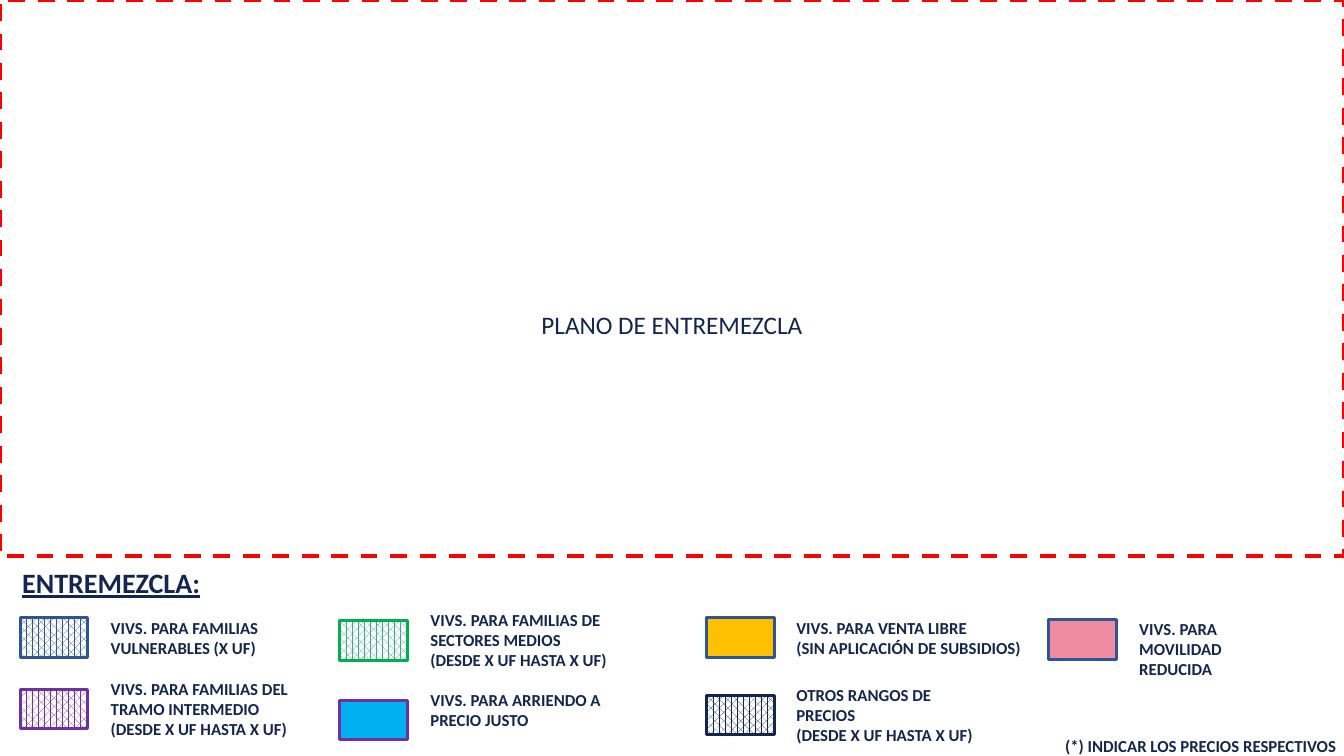
from dataclasses import dataclass

from pptx import Presentation
from pptx.dml.color import RGBColor
from pptx.enum.dml import MSO_LINE, MSO_PATTERN
from pptx.enum.shapes import MSO_SHAPE
from pptx.enum.text import MSO_ANCHOR, PP_ALIGN
from pptx.util import Emu, Pt

PX = 9144
NAVY, BLUE, PURPLE, WHITE = "12264E", "2F5597", "7030A0", "FFFFFF"
SWATCH_W, SWATCH_H = 67, 39


@dataclass
class Entry:
    """One legend entry: a swatch and its label, in px (100 to the inch)."""
    swatch: tuple[int, int]
    label: tuple[int, int, int, int]
    lines: tuple[str, ...]
    fill: str
    line: str
    patterned: bool = False


LEGEND = [
    Entry((20, 613), (100, 608, 187, 50),
          ("VIVS. PARA FAMILIAS VULNERABLES (X UF)",), BLUE, BLUE, True),
    Entry((20, 684), (100, 668, 197, 71),
          ("VIVS. PARA FAMILIAS DEL TRAMO INTERMEDIO (DESDE X UF HASTA X UF)",),
          PURPLE, PURPLE, True),
    Entry((337, 616), (417, 600, 235, 71),
          ("VIVS. PARA FAMILIAS DE SECTORES MEDIOS", "(DESDE X UF HASTA X UF)"),
          "3CAA90", "00B050", True),
    Entry((337, 695), (417, 679, 197, 50),
          ("VIVS. PARA ARRIENDO A PRECIO JUSTO",), "00B0F0", PURPLE),
    Entry((701, 613), (780, 608, 300, 50),
          ("VIVS. PARA VENTA LIBRE", "(SIN APLICACIÓN DE SUBSIDIOS)"), "FFC000", BLUE),
    Entry((701, 690), (780, 674, 197, 71),
          ("OTROS RANGOS DE PRECIOS", "(DESDE X UF HASTA X UF)"), NAVY, NAVY, True),
    Entry((1040, 615), (1120, 609, 108, 71),
          ("VIVS. PARA MOVILIDAD REDUCIDA",), "EF8BA0", BLUE),
]


def rgb(color: str) -> RGBColor:
    """Turn a hex string into a colour."""
    return RGBColor.from_string(color)


def px(*lengths: int) -> list[Emu]:
    """Turn px lengths into EMU."""
    return [Emu(n * PX) for n in lengths]


def write(tf, lines: tuple[str, ...], size: int, bold: bool = True,
          align: PP_ALIGN = PP_ALIGN.LEFT) -> None:
    """Fill a text frame with one paragraph per line."""
    tf.word_wrap = True
    tf.text = "\n".join(lines)
    for p in tf.paragraphs:
        p.alignment = align
        p.font.name, p.font.size, p.font.bold = "Calibri", Pt(size), bold
        p.font.color.rgb = rgb(NAVY)


def add_box(slide, box: tuple[int, int, int, int], line: str, width: float):
    """Add an outlined rectangle without shadow."""
    sp = slide.shapes.add_shape(MSO_SHAPE.RECTANGLE, *px(*box))
    sp.shadow.inherit = False
    sp.line.color.rgb, sp.line.width = rgb(line), Pt(width)
    return sp


def add_label(slide, box: tuple[int, int, int, int], lines: tuple[str, ...],
              align: PP_ALIGN = PP_ALIGN.LEFT) -> None:
    """Add a bold legend label."""
    write(slide.shapes.add_textbox(*px(*box)).text_frame, lines, 12, align=align)


def add_entry(slide, entry: Entry) -> None:
    """Draw the swatch and label of one legend entry."""
    fill = add_box(slide, (*entry.swatch, SWATCH_W, SWATCH_H), entry.line, 2.25).fill
    if entry.patterned:
        fill.patterned()
        fill.pattern = MSO_PATTERN.PERCENT_60
        fill.back_color.rgb = rgb(WHITE)
    else:
        fill.solid()
    fill.fore_color.rgb = rgb(entry.fill)
    add_label(slide, entry.label, entry.lines)


def add_plan(slide) -> None:
    """Add the dashed frame reserved for the plan."""
    sp = add_box(slide, (0, 0, 1333, 552), "FF0000", 3)
    sp.fill.background()
    sp.line.dash_style = MSO_LINE.DASH
    tf = sp.text_frame
    tf.vertical_anchor = MSO_ANCHOR.MIDDLE
    tf.margin_top, tf.margin_bottom = px(97, 5)
    write(tf, ("PLANO DE ENTREMEZCLA",), 18, bold=False, align=PP_ALIGN.CENTER)


def add_title(slide) -> None:
    """Place and format the legend title."""
    sp = slide.shapes.title
    sp.left, sp.top, sp.width, sp.height = px(12, 556, 443, 44)
    tf = sp.text_frame
    tf.vertical_anchor = MSO_ANCHOR.TOP
    write(tf, ("ENTREMEZCLA:",), 20)
    tf.paragraphs[0].font.underline = True


def main() -> None:
    """Build and save the slide."""
    prs = Presentation()
    prs.slide_width, prs.slide_height = px(1333, 750)
    slide = prs.slides.add_slide(prs.slide_layouts[5])
    add_plan(slide)
    add_title(slide)
    for entry in LEGEND:
        add_entry(slide, entry)
    add_label(slide, (1041, 725, 300, 30),
              ("(*) INDICAR LOS PRECIOS RESPECTIVOS",), PP_ALIGN.CENTER)
    prs.save("out.pptx")


if __name__ == "__main__":
    main()
